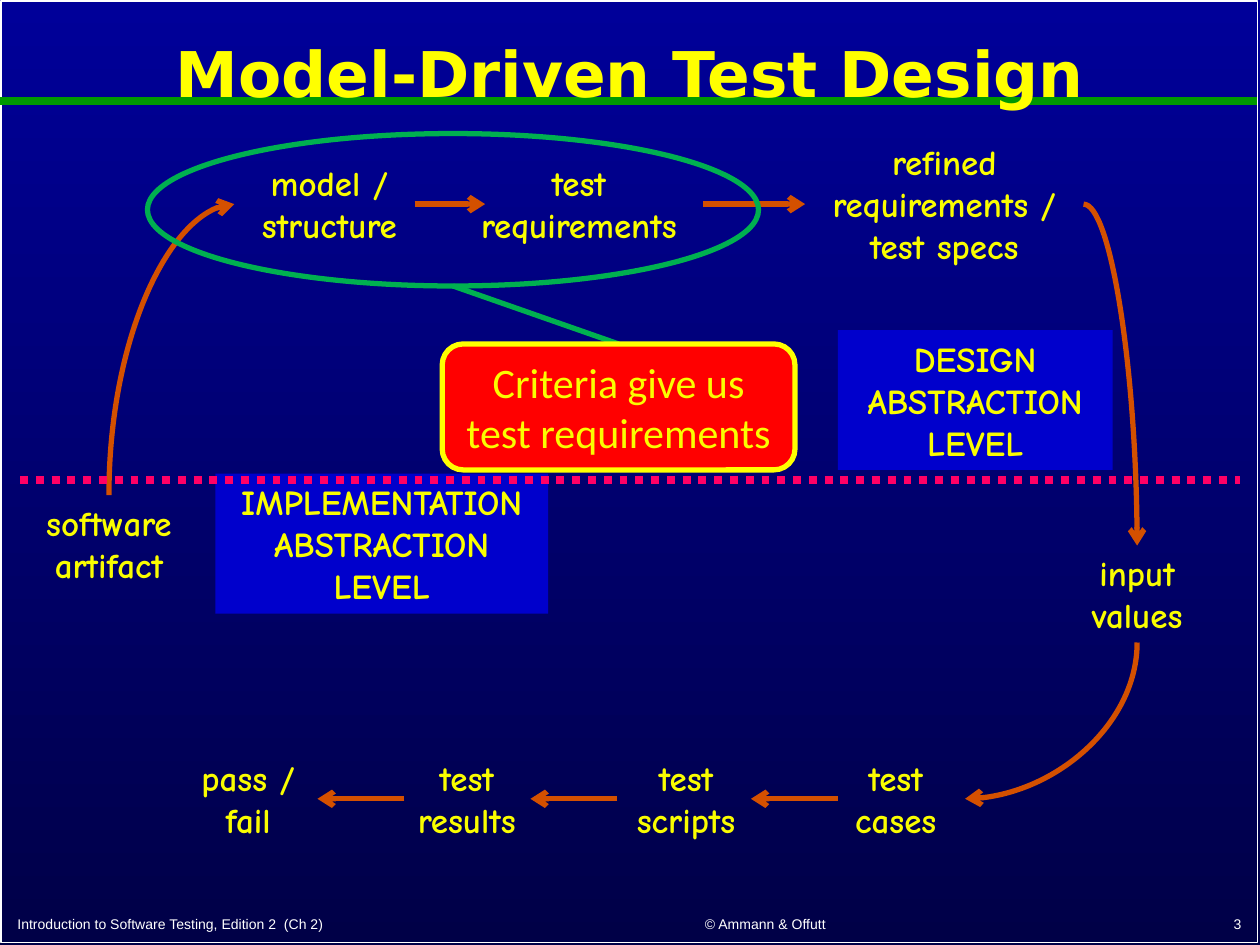
from lxml.etree import SubElement
from pptx import Presentation
from pptx.dml.color import RGBColor
from pptx.enum.dml import MSO_LINE
from pptx.enum.shapes import MSO_CONNECTOR, MSO_SHAPE
from pptx.enum.text import MSO_ANCHOR, MSO_AUTO_SIZE, PP_ALIGN
from pptx.oxml.ns import qn
from pptx.util import Inches, Pt

YELLOW, WHITE, ORANGE, GREEN = "FAFD00", "FFFFFF", "D45000", "00B050"
TOP, RIGHT, BOTTOM, LEFT = 0, 3, 2, 1


def color(hex_text):
    return RGBColor.from_string(hex_text)


def write(shape, lines, size, font, hex_text, bold=False,
          align=PP_ALIGN.CENTER, anchor=MSO_ANCHOR.MIDDLE, wrap=True):
    frame = shape.text_frame
    frame.text = "\n".join(lines)
    frame.word_wrap = wrap
    frame.vertical_anchor = anchor
    for paragraph in frame.paragraphs:
        paragraph.alignment = align
        paragraph.font.size = Pt(size)
        paragraph.font.name = font
        paragraph.font.bold = bold
        paragraph.font.color.rgb = color(hex_text)


def add_box(slide, kind, box, fill=None, line=None, width=3):
    shape = slide.shapes.add_shape(kind, *map(Inches, box))
    shape.shadow.inherit = False
    if fill:
        shape.fill.solid()
        shape.fill.fore_color.rgb = color(fill)
    else:
        shape.fill.background()
    if line:
        shape.line.color.rgb = color(line)
        shape.line.width = Pt(width)
    else:
        shape.line.fill.background()
    return shape


def add_line(slide, start, end, hex_text, width=3, arrow=None,
             kind=MSO_CONNECTOR.STRAIGHT):
    """Draw a connector; arrow is 'headEnd', 'tailEnd' or None."""
    connector = slide.shapes.add_connector(kind, *map(Inches, start + end))
    connector.line.color.rgb = color(hex_text)
    connector.line.width = Pt(width)
    properties = connector._element.spPr
    if arrow:
        SubElement(properties.find(qn("a:ln")), qn(f"a:{arrow}")).set("type", "arrow")
    SubElement(properties, qn("a:effectLst"))
    return connector


def add_curve(slide, start, end, start_step, start_side, end_step, end_side, arrow):
    """Quarter curve that leaves sideways and arrives vertically."""
    curve = add_line(slide, start, end, ORANGE, arrow=arrow, kind=MSO_CONNECTOR.CURVE)
    curve._element.spPr.find(qn("a:prstGeom")).set("prst", "curvedConnector2")
    curve.begin_connect(start_step, start_side)
    curve.end_connect(end_step, end_side)


def add_step(slide, text, box):
    step = slide.shapes.add_textbox(*map(Inches, box))
    write(step, [text], 20, "Comic Neue", YELLOW, True, anchor=MSO_ANCHOR.TOP)
    step.text_frame.auto_size = MSO_AUTO_SIZE.SHAPE_TO_FIT_TEXT
    return step


def add_frame(slide, box):
    # Background, border, rule and title
    fill = slide.background.fill
    fill.gradient()
    fill.gradient_angle = 270
    for stop, hex_text in zip(fill.gradient_stops, ("000099", "000047")):
        stop.color.rgb = color(hex_text)
    left, top, width, height = box
    add_box(slide, MSO_SHAPE.RECTANGLE, box, line=WHITE, width=1)
    add_line(slide, (0, 0.8), (left + width, 0.8), "009900", 4.5)
    title = slide.shapes.title
    title.left, title.top = Inches(0.05), Inches(0.11)
    title.width, title.height = Inches(9.9), Inches(1)
    write(title, ["Model-Driven Test Design"], 36, "DejaVu Sans", "FFFF00", True)
    title.text_frame.paragraphs[0].line_spacing = 0.9
    slide.shapes._spTree.append(title._element)  # title lies over the rule


def add_footer(slide, bottom):
    parts = [
        ("Introduction to Software Testing, Edition 2  (Ch 2)", 0.04, 4.2, PP_ALIGN.LEFT),
        ("© Ammann & Offutt", 4.49, 3.17, PP_ALIGN.CENTER),
        ("3", 7.87, 2.08, PP_ALIGN.RIGHT),
    ]
    for text, left, width, align in parts:
        shape = slide.shapes.add_textbox(
            Inches(left), Inches(bottom - 0.28), Inches(width), Inches(0.28))
        write(shape, [text], 8, "Arial", WHITE, align=align, anchor=MSO_ANCHOR.BOTTOM)


def add_process(slide, upper, lower):
    # Steps, with the two rows centred on the heights upper and lower
    height = 0.77
    row_top = upper - height / 2
    artifact = add_step(slide, "software artifact", (0.11, 3.93, 1.51, height))
    model = add_step(slide, "model / structure", (1.86, row_top, 1.51, height))
    needs = add_step(slide, "test requirements", (3.61, row_top, 1.97, height))
    refined = add_step(slide, "refined requirements / test specs",
                       (6.39, upper - 0.555, 2.21, 1.11))
    values = add_step(slide, "input values", (8.27, 4.33, 1.51, height))
    row = [("test cases", 6.56, 1.1), ("test scripts", 4.82, 1.25),
           ("test results", 3.08, 1.25), ("pass / fail", 1.35, 1.24)]
    cases = [add_step(slide, text, (left, lower - height / 2, width, height))
             for text, left, width in row][0]

    # Straight arrows
    add_line(slide, (3.29, upper), (3.85, upper), ORANGE, arrow="tailEnd")
    refine = add_line(slide, (5.58, upper), (6.39, upper), ORANGE, arrow="tailEnd")
    refine.begin_connect(needs, RIGHT)
    refine.end_connect(refined, LEFT)
    for tip in (2.52, 4.21, 5.96):
        add_line(slide, (tip + 0.69, lower), (tip, lower), ORANGE, arrow="tailEnd")

    # Curved arrows
    add_curve(slide, (1.86, upper), (0.87, 3.93), model, LEFT, artifact, TOP, "headEnd")
    add_curve(slide, (7.66, lower), (9.02, 5.1), cases, RIGHT, values, BOTTOM, "headEnd")
    add_curve(slide, (8.6, upper), (9.02, 4.33), refined, RIGHT, values, TOP, "tailEnd")


def add_level(slide, word, box):
    level = add_box(slide, MSO_SHAPE.RECTANGLE, box, fill="0000CC")
    write(level, [word, "ABSTRACTION", "LEVEL"], 20, "Comic Neue", YELLOW, True,
          wrap=False)


def add_criteria(slide, ring_box, box):
    # Ring round the modelling steps, with its callout
    left, top, width, height = ring_box
    add_box(slide, MSO_SHAPE.OVAL, ring_box, line=GREEN)
    leader = add_line(slide, (left + width / 2, top + height),
                      (box[0] + box[2] / 2, box[1]), GREEN)
    callout = add_box(slide, MSO_SHAPE.ROUNDED_RECTANGLE, box, "FF0000", "FFFF00")
    write(callout, ["Criteria give us test requirements"], 24, "Calibri", YELLOW)
    leader.end_connect(callout, TOP)


def main():
    presentation = Presentation()
    presentation.slide_width, presentation.slide_height = Inches(10), Inches(7.5)
    slide = presentation.slides.add_slide(presentation.slide_layouts[5])
    add_frame(slide, (0.01, 0.01, 9.97, 7.47))
    add_footer(slide, 7.45)
    # Level labels lie under the flow, the divider over it
    add_level(slide, "IMPLEMENTATION", (1.71, 3.76, 2.64, 1.11))
    add_level(slide, "DESIGN", (6.65, 2.62, 2.18, 1.11))
    add_process(slide, 1.62, 6.34)
    divider = add_line(slide, (0.16, 3.81), (9.84, 3.81), "FF0066", 4.5)
    divider.line.dash_style = MSO_LINE.ROUND_DOT
    add_criteria(slide, (1.17, 1.06, 4.85, 1.21), (3.51, 2.73, 2.8, 1))
    presentation.save("out.pptx")


if __name__ == "__main__":
    main()
